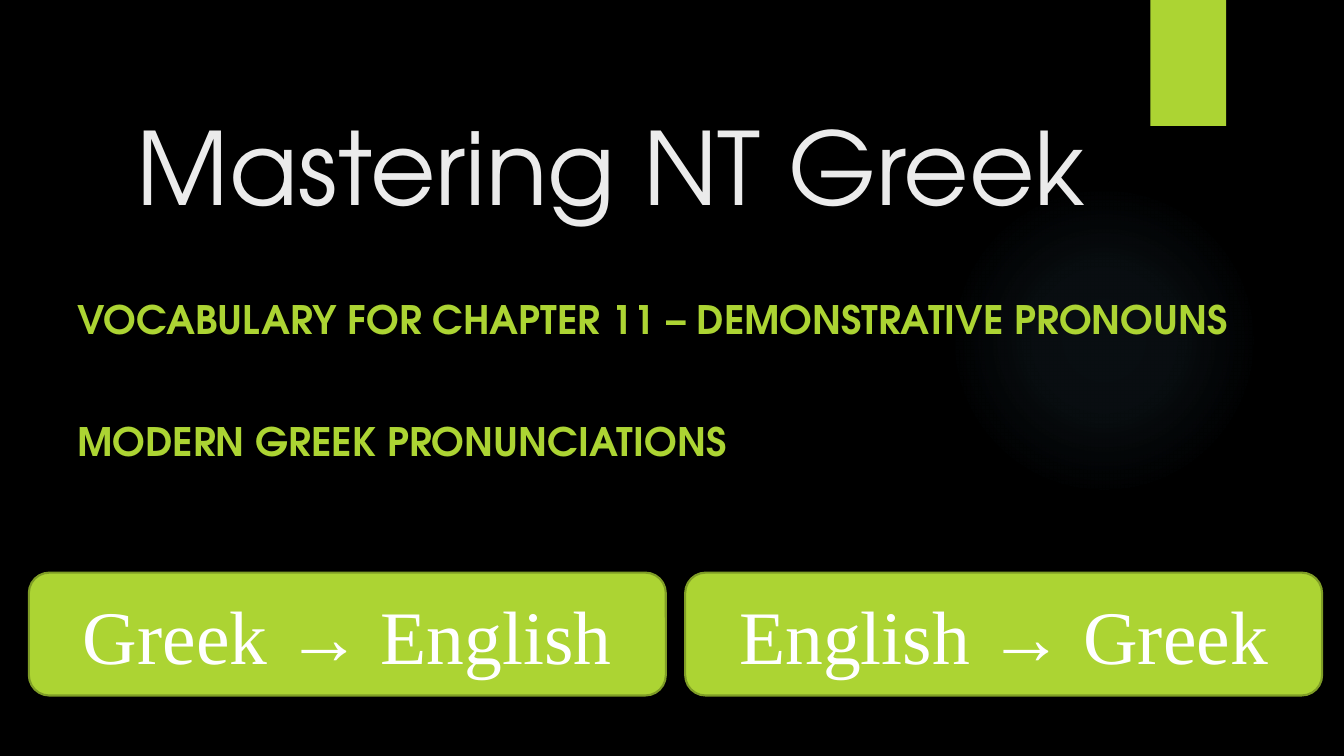
from pptx import Presentation, oxml
from pptx.dml.color import RGBColor
from pptx.enum import shapes, text
from pptx.oxml import ns
from pptx.util import Pt

THEME = {
    "black": RGBColor.from_string("000000"),
    "lime": RGBColor.from_string("ACD433"),
    "olive": RGBColor.from_string("7F9D26"),
    "pale": RGBColor.from_string("EBEBEB"),
    "white": RGBColor.from_string("FFFFFF"),
    "glow": "7AC4F0",
    "heading_font": "TeX Gyre Adventor",
    "button_font": "Times New Roman",
    "title_size": 72,
    "subtitle_size": 28,
    "button_size": 54,
}


def write(paragraph, words, font, size, color, bold=False):
    run = paragraph.add_run()
    run.text = words
    for key, value in {"name": font, "size": Pt(size), "bold": bold}.items():
        setattr(run.font, key, value)
    run.font.color.rgb = color


def add_part(preset, left, top, width, height):
    part = slide.shapes.add_shape(preset, Pt(left), Pt(top), Pt(width), Pt(height))
    part.shadow.inherit = False
    part.line.fill.background()
    part.fill.solid()
    part.fill.fore_color.rgb = THEME["lime"]
    return part


deck = Presentation()
deck.slide_width, deck.slide_height = Pt(960), Pt(540)
slide = deck.slides.add_slide(deck.slide_layouts[6])
slide.background.fill.solid()
slide.background.fill.fore_color.rgb = THEME["black"]

glow = add_part(shapes.MSO_SHAPE.OVAL, 677.5, 131.8, 221.8, 221.8)
stops = "".join(
    f'<a:gs pos="{place * 1000}"><a:srgbClr val="{THEME["glow"]}">'
    f'<a:alpha val="{opacity * 1000}"/></a:srgbClr></a:gs>'
    for place, opacity in ((0, 7), (36, 6), (69, 0))
)
gradient = oxml.parse_xml(
    f'<a:gradFill {ns.nsdecls("a")} rotWithShape="1"><a:gsLst>{stops}</a:gsLst>'
    '<a:path path="circle"><a:fillToRect l="50000" t="50000" r="50000" b="50000"/>'
    "</a:path></a:gradFill>"
)
glow_properties = glow._element.spPr
glow_properties.replace(glow_properties.find(ns.qn("a:solidFill")), gradient)

add_part(shapes.MSO_SHAPE.RECTANGLE, 821.8, 0, 54, 90)

title = slide.shapes.add_textbox(Pt(90.7), Pt(50.4), Pt(722.9), Pt(114.5)).text_frame
title.word_wrap = True
title.vertical_anchor = text.MSO_ANCHOR.BOTTOM
write(title.paragraphs[0], "Mastering NT Greek", THEME["heading_font"],
      THEME["title_size"], THEME["pale"])

subtitle = slide.shapes.add_textbox(Pt(48.2), Pt(207.4), Pt(845.3), Pt(193.7)).text_frame
subtitle.word_wrap = True
chapter = subtitle.paragraphs[0]
pronunciation = subtitle.add_paragraph()
pronunciation.space_before = Pt(53.6)
for line, words in (
    (chapter, "VOCABULARY FOR CHAPTER 11 – DEMONSTRATIVE PRONOUNS"),
    (pronunciation, "MODERN GREEK PRONUNCIATIONS"),
):
    write(line, words, THEME["heading_font"], THEME["subtitle_size"],
          THEME["lime"], bold=True)

for column, direction in enumerate(("Greek → English", "English → Greek")):
    button = add_part(shapes.MSO_SHAPE.ROUNDED_RECTANGLE,
                      20.6 + column * 468.8, 409, 455, 87.8)
    button.line.color.rgb = THEME["olive"]
    button.line.width = Pt(1.5)
    button.text_frame.vertical_anchor = text.MSO_ANCHOR.MIDDLE
    label = button.text_frame.paragraphs[0]
    label.alignment = text.PP_ALIGN.CENTER
    write(label, direction, THEME["button_font"], THEME["button_size"], THEME["white"])

deck.save("out.pptx")
